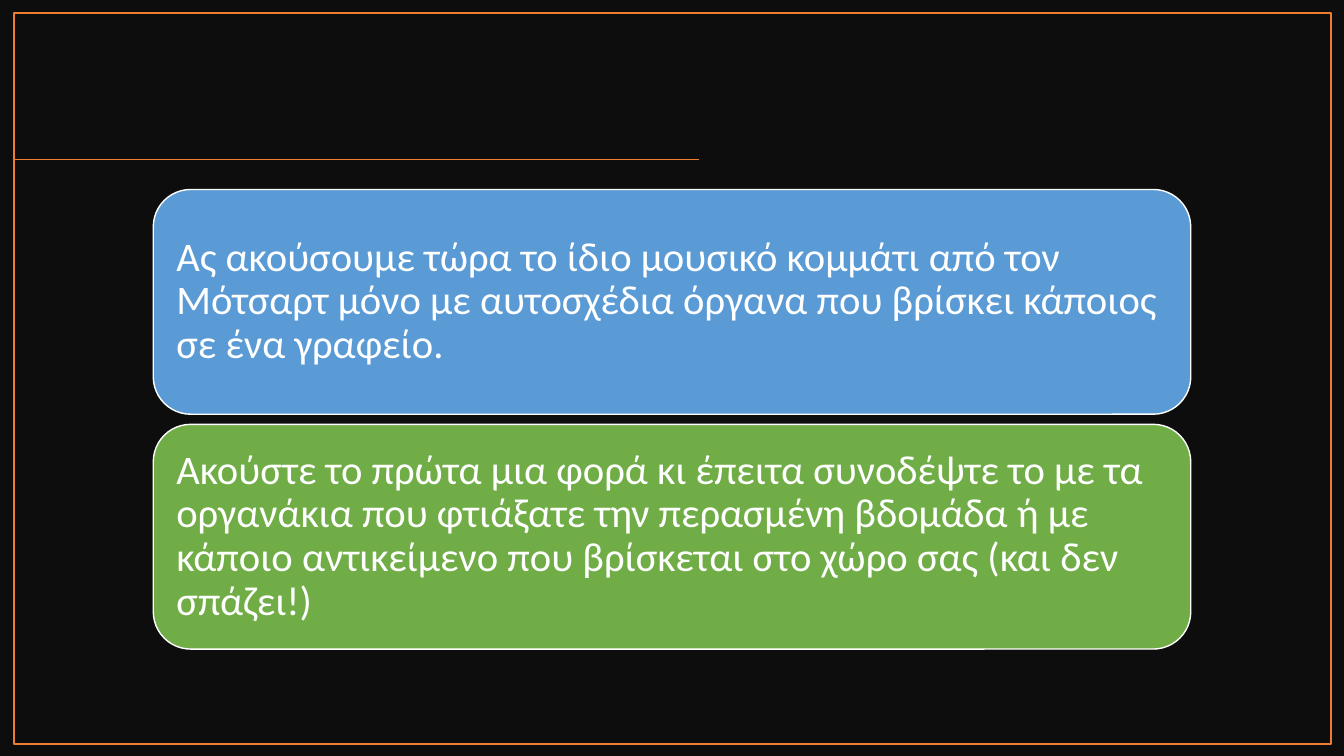
"""Build a dark slide with two rounded panels of listening instructions."""
from lxml.etree import SubElement
from pptx import Presentation
from pptx.dml.color import RGBColor
from pptx.enum.shapes import MSO_CONNECTOR, MSO_SHAPE
from pptx.enum.text import MSO_ANCHOR, PP_ALIGN
from pptx.oxml.ns import qn
from pptx.util import Inches, Pt

PANELS = [
    ("5B9BD5", "Ας ακούσουμε τώρα το ίδιο μουσικό κομμάτι από τον Μότσαρτ μόνο με "
               "αυτοσχέδια όργανα που βρίσκει κάποιος σε ένα γραφείο."),
    ("70AD47", "Ακούστε το πρώτα μια φορά κι έπειτα συνοδέψτε το με τα οργανάκια που "
               "φτιάξατε την περασμένη βδομάδα ή με κάποιο αντικείμενο που βρίσκεται "
               "στο χώρο σας (και δεν σπάζει!)"),
]
BACKDROP, ACCENT, WHITE = "0D0D0D", "ED7D31", "FFFFFF"
SLIDE_WIDTH, SLIDE_HEIGHT = 13.33, 7.5
PANEL_LEFT, PANEL_TOP, PANEL_WIDTH, PANEL_HEIGHT, PANEL_STEP = 1.52, 1.88, 10.29, 2.23, 2.33
FRAME_FORMAT = {
    "word_wrap": True, "vertical_anchor": MSO_ANCHOR.MIDDLE,
    "margin_left": Inches(0.12), "margin_right": Inches(0.12),
    "margin_top": Inches(0.12), "margin_bottom": Inches(0.12),
}
PARAGRAPH_FORMAT = {"alignment": PP_ALIGN.LEFT, "line_spacing": 0.9}
FONT_FORMAT = {"name": "Calibri", "size": Pt(29)}


def apply_format(target, values):
    for name, value in values.items():
        setattr(target, name, value)


def paint(color_format, color):
    color_format.rgb = RGBColor.from_string(color)


def draw_line(line, color):
    paint(line.color, color)
    line.width = Pt(1)


def add_box(slide, kind, box, fill=None, outline=None):
    shape = slide.shapes.add_shape(kind, *map(Inches, box))
    shape.shadow.inherit = False
    if fill:
        shape.fill.solid()
        paint(shape.fill.fore_color, fill)
    else:
        shape.fill.background()
    if outline:
        draw_line(shape.line, outline)
    else:
        shape.line.fill.background()
    return shape


def add_panel(slide, top, color, text):
    box = (PANEL_LEFT, top, PANEL_WIDTH, PANEL_HEIGHT)
    panel = add_box(slide, MSO_SHAPE.ROUNDED_RECTANGLE, box, color, WHITE)
    apply_format(panel.text_frame, FRAME_FORMAT)
    paragraph = panel.text_frame.paragraphs[0]
    apply_format(paragraph, PARAGRAPH_FORMAT)
    run = paragraph.add_run()
    run.text = text
    apply_format(run.font, FONT_FORMAT)
    paint(run.font.color, WHITE)


def main():
    presentation = Presentation()
    presentation.slide_width = Inches(SLIDE_WIDTH)
    presentation.slide_height = Inches(SLIDE_HEIGHT)
    slide = presentation.slides.add_slide(presentation.slide_layouts[6])

    add_box(slide, MSO_SHAPE.RECTANGLE, (0, 0, SLIDE_WIDTH, SLIDE_HEIGHT), fill=BACKDROP)
    ends = map(Inches, (6.93, 1.58, 0.14, 1.58))
    title_rule = slide.shapes.add_connector(MSO_CONNECTOR.STRAIGHT, *ends)
    draw_line(title_rule.line, ACCENT)
    SubElement(title_rule._element.spPr, qn("a:effectLst"))
    add_box(slide, MSO_SHAPE.RECTANGLE, (0.14, 0.13, 13.06, 7.25), outline=ACCENT)

    for index, (color, text) in enumerate(PANELS):
        add_panel(slide, PANEL_TOP + index * PANEL_STEP, color, text)
    presentation.save("out.pptx")


if __name__ == "__main__":
    main()
